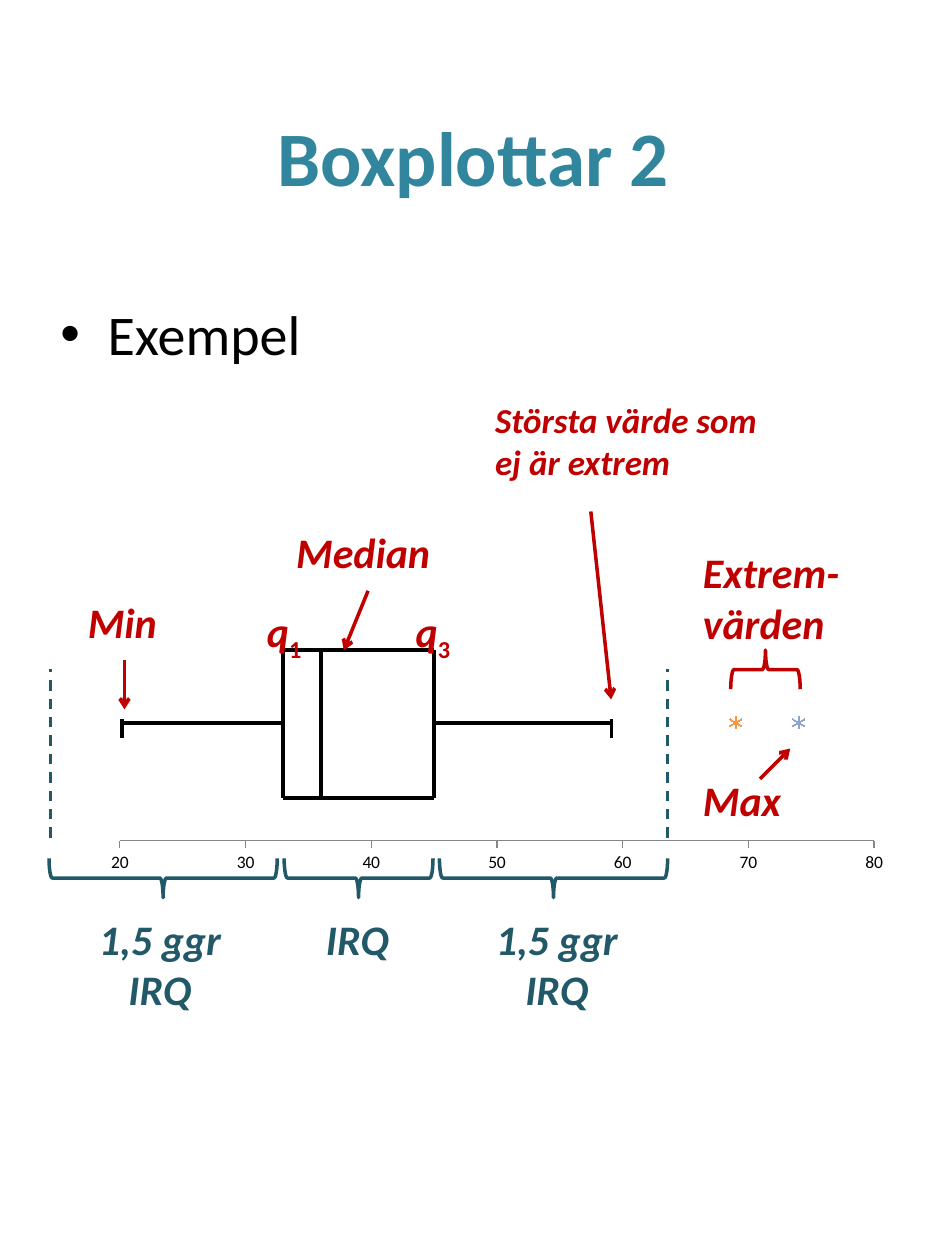
from lxml import etree
from pptx import Presentation
from pptx.chart.data import XyChartData
from pptx.dml.color import RGBColor
from pptx.enum.chart import XL_CHART_TYPE as ChartType, XL_MARKER_STYLE as Marker
from pptx.enum.chart import XL_TICK_LABEL_POSITION as LabelPos, XL_TICK_MARK as Tick
from pptx.enum.dml import MSO_LINE_DASH_STYLE as Dash
from pptx.enum.shapes import MSO_CONNECTOR as Connector, MSO_SHAPE as Shape
from pptx.enum.text import MSO_ANCHOR as Anchor, PP_ALIGN as Align
from pptx.oxml import parse_xml
from pptx.oxml.ns import nsdecls, qn
from pptx.util import Cm, Pt

FONT = "Calibri"
BLACK = RGBColor(0x00, 0x00, 0x00)
RED = RGBColor(0xC0, 0x00, 0x00)
TEAL = RGBColor(0x31, 0x85, 0x9C)
DARK_TEAL = RGBColor(0x21, 0x59, 0x68)
GRAY = RGBColor(0x86, 0x86, 0x86)
ORANGE = RGBColor(0xF7, 0x96, 0x46)
BLUE = RGBColor(0x8E, 0xA5, 0xCB)

# Box plot data: points of each stroke, then the extreme values
MIN, Q1, MEDIAN, Q3, TOP_WHISKER = 19, 33, 36, 45, 59
LOW, MID, HIGH = 41, 71, 100
STROKES = [
    [(MIN, MID), (Q1, MID)],
    [(Q3, MID), (TOP_WHISKER, MID)],
    [(MEDIAN, HIGH), (MEDIAN, LOW)],
    [(Q1, HIGH), (Q1, LOW)],
    [(Q3, HIGH), (Q3, LOW)],
    [(69, MID)],
    [(74, MID)],
    [(Q1, HIGH), (Q3, HIGH)],
    [(Q1, LOW), (Q3, LOW)],
]
EXTREME_COLORS = {69: ORANGE, 74: BLUE}

# Labels: text, subscript, box in cm, size, colour, alignment
LABELS = [
    ("Median", "", (5.72, 10.49, 3.4, 1.4), 24, RED, Align.LEFT),
    ("q", "1", (5.13, 12.09, 3.4, 1.8), 24, RED, Align.LEFT),
    ("q", "3", (8.13, 12.09, 3.4, 1.8), 24, RED, Align.LEFT),
    ("Min", "", (1.52, 11.91, 3.4, 1.4), 24, RED, Align.LEFT),
    ("Max", "", (13.92, 15.49, 3.4, 1.4), 24, RED, Align.LEFT),
    ("Extrem-värden", "", (13.92, 10.9, 3.4, 2.4), 24, RED, Align.LEFT),
    ("Största värde som ej är extrem", "", (9.73, 7.9, 5.8, 2.2), 20, RED, Align.LEFT),
    ("IRQ", "", (6.32, 18.29, 3.4, 1.8), 24, DARK_TEAL, Align.LEFT),
    ("1,5 ggr IRQ", "", (1.32, 18.29, 3.81, 3.2), 24, DARK_TEAL, Align.CENTER),
    ("1,5 ggr IRQ", "", (9.32, 18.29, 3.81, 3.2), 24, DARK_TEAL, Align.CENTER),
]

# Braces: centre x, centre y, span, rotation, colour
BRACE_DEPTH = 0.79
BRACES = [
    (3.29, 17.7, 4.6, 270, DARK_TEAL),
    (7.23, 17.7, 3.0, 270, DARK_TEAL),
    (11.16, 17.7, 4.6, 270, DARK_TEAL),
    (15.43, 13.5, 1.4, 90, RED),
]

# Lines: x1, y1, x2, y2 in cm
ARROWS = [
    (7.42, 11.91, 6.93, 13.11),
    (15.32, 15.7, 15.93, 15.09),
    (2.51, 13.31, 2.51, 14.3),
    (11.91, 10.31, 12.32, 14.1),
]
WHISKER_CAPS = [(x, 14.49, x, 14.88) for x in (2.46, 12.32)]
FENCES = [(x, 16.89, x, 13.49) for x in (1.02, 13.46)]


def add_text(slide, box, text, size, color, align=Align.LEFT, bold=False,
             italic=False, sub="", anchor=Anchor.TOP, space=True):
    tf = slide.shapes.add_textbox(*map(Cm, box)).text_frame
    tf.word_wrap = True
    tf.vertical_anchor = anchor
    p = tf.paragraphs[0]
    p.alignment = align
    if space:
        before = etree.SubElement(p._p.get_or_add_pPr(), qn("a:spcBef"))
        etree.SubElement(before, qn("a:spcPct")).set("val", "20000")
    for part in filter(None, (text, sub)):
        r = p.add_run()
        r.text = part
        f = r.font
        f.name, f.size, f.bold = FONT, Pt(size), bold
        f.italic = italic and part is text
        f.color.rgb = color
    if sub:
        r.font._element.set("baseline", "-25000")
    return p


def add_line(slide, ends, color, width, arrow=False, dash=None):
    line = slide.shapes.add_connector(Connector.STRAIGHT, *map(Cm, ends))
    line.line.color.rgb = color
    line.line.width = Pt(width)
    if dash:
        line.line.dash_style = dash
    if arrow:
        etree.SubElement(line.line._get_or_add_ln(), qn("a:tailEnd")).set("type", "arrow")
    etree.SubElement(line._element.spPr, qn("a:effectLst"))


def add_brace(slide, cx, cy, span, rotation, color):
    sp = slide.shapes.add_shape(Shape.LEFT_BRACE, Cm(cx - BRACE_DEPTH / 2),
                                Cm(cy - span / 2), Cm(BRACE_DEPTH), Cm(span))
    sp.rotation = rotation
    sp.shadow.inherit = False
    sp.fill.background()
    sp.line.color.rgb = color
    sp.line.width = Pt(2)


def add_box_plot(slide):
    data = XyChartData()
    for i, points in enumerate(STROKES, 1):
        series = data.add_series(f"Series {i}")
        for x, y in points:
            series.add_data_point(x, y)
    chart = slide.shapes.add_chart(ChartType.XY_SCATTER_LINES_NO_MARKERS, Cm(1.93),
                                   Cm(12.7), Cm(16.21), Cm(5), data).chart
    chart.has_legend = chart.has_title = False
    chart.font.name, chart.font.size = FONT, Pt(10)
    chart.font.color.rgb = BLACK

    # Axes
    xs, ys = chart.category_axis, chart.value_axis
    xs.minimum_scale, xs.maximum_scale, xs.major_unit = 20, 80, 10
    ys.minimum_scale, ys.maximum_scale = 24, 100
    xs.has_major_gridlines = ys.has_major_gridlines = False
    xs.major_tick_mark = Tick.OUTSIDE
    xs.tick_label_position = LabelPos.LOW
    xs.format.line.color.rgb = GRAY
    ys.visible = False

    # Strokes and extreme values
    for series, points in zip(chart.plots[0].series, STROKES):
        series.smooth = False
        if len(points) > 1:
            series.format.line.color.rgb = BLACK
            series.format.line.width = Pt(2.25)
            series.marker.style = Marker.NONE
        else:
            color = EXTREME_COLORS[points[0][0]]
            series.format.line.fill.background()
            series.marker.style, series.marker.size = Marker.STAR, 7
            series.marker.format.fill.solid()
            series.marker.format.fill.fore_color.rgb = color
            series.marker.format.line.color.rgb = color

    # Fixed inner plot area
    layout = parse_xml(
        f'<c:layout {nsdecls("c")}><c:manualLayout><c:layoutTarget val="inner"/>'
        '<c:xMode val="edge"/><c:yMode val="edge"/><c:x val="0.03"/><c:y val="0.08"/>'
        '<c:w val="0.938"/><c:h val="0.77"/></c:manualLayout></c:layout>')
    area = chart._chartSpace.chart.plotArea
    for old in area.findall(qn("c:layout")):
        area.remove(old)
    area.insert(0, layout)


def main():
    prs = Presentation()
    prs.slide_width, prs.slide_height = Cm(19.05), Cm(25.4)
    slide = prs.slides.add_slide(prs.slide_layouts[6])

    # Title and bullet
    add_text(slide, (0.97, 1.02, 17.15, 4.24), "Boxplottar 2", 44, TEAL, Align.CENTER,
             bold=True, anchor=Anchor.MIDDLE, space=False)
    p = add_text(slide, (0.97, 5.92, 17.15, 16.76), "Exempel", 32, BLACK)
    pPr = p._p.get_or_add_pPr()
    pPr.set("marL", str(Cm(0.95)))
    pPr.set("indent", str(-Cm(0.95)))
    etree.SubElement(pPr, qn("a:buFont")).set("typeface", "Arial")
    etree.SubElement(pPr, qn("a:buChar")).set("char", "•")

    # Box plot and its annotations
    add_box_plot(slide)
    for text, sub, box, size, color, align in LABELS:
        add_text(slide, box, text, size, color, align, bold=True, italic=True, sub=sub)
    for brace in BRACES:
        add_brace(slide, *brace)
    for ends in WHISKER_CAPS:
        add_line(slide, ends, BLACK, 1.75)
    for ends in ARROWS:
        add_line(slide, ends, RED, 2, arrow=True)
    for ends in FENCES:
        add_line(slide, ends, DARK_TEAL, 1.5, dash=Dash.DASH)

    prs.save("out.pptx")


if __name__ == "__main__":
    main()
